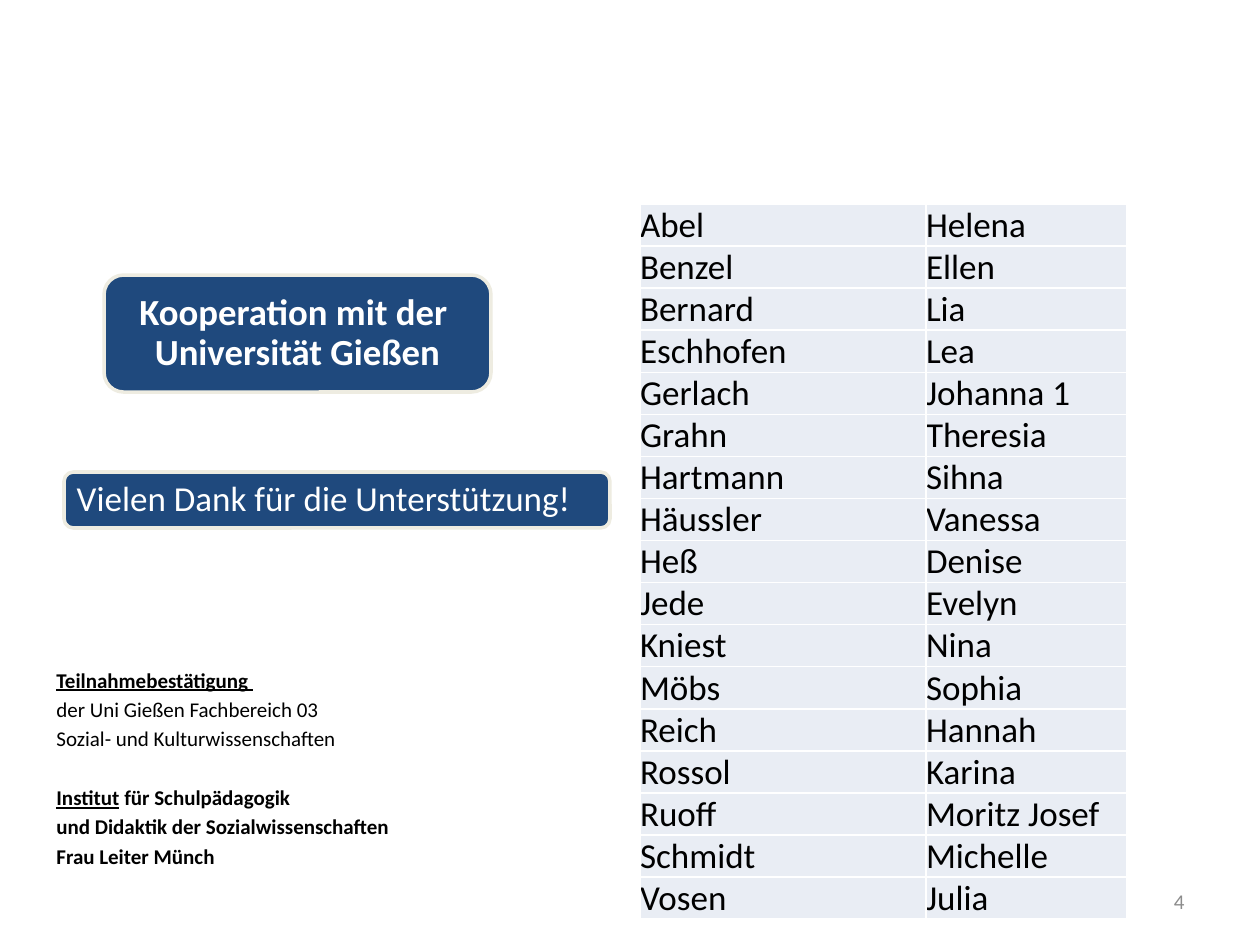
import pptx
import pptx.dml.color
import pptx.enum.shapes
import pptx.enum.text
import pptx.oxml
import pptx.oxml.ns
import pptx.util

PX = 914400 / 126
FONT = "Calibri"
COLORS = {"navy": "1F497D", "cream": "EEECE1", "cell": "E9EDF4",
          "white": "FFFFFF", "black": "000000", "gray": "8C8C8C"}
ALIGN = pptx.enum.text.PP_ALIGN
ANCHOR = pptx.enum.text.MSO_ANCHOR

STUDENTS = [
    ("Abel", "Helena"), ("Benzel", "Ellen"), ("Bernard", "Lia"),
    ("Eschhofen", "Lea"), ("Gerlach", "Johanna 1"), ("Grahn", "Theresia"),
    ("Hartmann", "Sihna"), ("Häussler", "Vanessa"), ("Heß", "Denise"),
    ("Jede", "Evelyn"), ("Kniest", "Nina"), ("Möbs", "Sophia"),
    ("Reich", "Hannah"), ("Rossol", "Karina"), ("Ruoff", "Moritz Josef"),
    ("Schmidt", "Michelle"), ("Vosen", "Julia"),
]

# (text, bold, underlined) runs, preceded by the space before in points
CERTIFICATE = [
    (0, [("Teilnahmebestätigung ", True, True)]),
    (2.4, [("der Uni Gießen Fachbereich 03", False, False)]),
    (2.4, [("Sozial- und Kulturwissenschaften", False, False)]),
    (19, [("Institut", True, True), (" für Schulpädagogik", True, False)]),
    (2.4, [("und Didaktik der Sozialwissenschaften", True, False)]),
    (2.4, [("Frau Leiter Münch", True, False)]),
]


def px(*values):
    """Turn pixel lengths into EMU."""
    return [pptx.util.Emu(round(v * PX)) for v in values]


def rgb(name):
    """Look up a named colour."""
    return pptx.dml.color.RGBColor.from_string(COLORS[name])


def style(font, size, color, bold=False, underline=False):
    """Format a font."""
    font.name = FONT
    font.size = pptx.util.Pt(size)
    font.bold = bold
    font.underline = underline
    font.color.rgb = rgb(color)


def set_margins(obj, margin):
    """Give a text frame or cell the same margin on all sides."""
    obj.margin_left, obj.margin_top, obj.margin_right, obj.margin_bottom = px(*[margin] * 4)


def add_banner(s, box, text, size, margin, align, bold=False):
    """Add a rounded banner with its text."""
    sp = s.shapes.add_shape(pptx.enum.shapes.MSO_SHAPE.ROUNDED_RECTANGLE, *px(*box))
    sp.shadow.inherit = False
    sp.fill.solid()
    sp.fill.fore_color.rgb = rgb("navy")
    sp.line.color.rgb = rgb("cream")
    sp.line.width = pptx.util.Pt(2)
    tf = sp.text_frame
    tf.word_wrap = True
    tf.vertical_anchor = ANCHOR.MIDDLE
    set_margins(tf, margin)
    tf.text = text
    p = tf.paragraphs[0]
    p.alignment = align
    p.line_spacing = 0.9
    for r in p.runs:
        style(r.font, size, "white", bold)


def add_text(s, box, paragraphs, color, align=ALIGN.LEFT, anchor=ANCHOR.TOP):
    """Add a text box of paragraphs made of formatted runs."""
    tf = s.shapes.add_textbox(*px(*box)).text_frame
    tf.word_wrap = True
    tf.vertical_anchor = anchor
    for i, (space, runs) in enumerate(paragraphs):
        p = tf.add_paragraph() if i else tf.paragraphs[0]
        p.alignment = align
        if space:
            p.space_before = pptx.util.Pt(space)
        for text, bold, underline in runs:
            r = p.add_run()
            r.text = text
            style(r.font, 12, color, bold, underline)


def add_borders(cell):
    """Draw thin white lines around a cell."""
    tc_pr = cell._tc.get_or_add_tcPr()
    for side in ("lnL", "lnR", "lnT", "lnB"):
        tc_pr.append(pptx.oxml.parse_xml(
            f'<a:{side} {pptx.oxml.ns.nsdecls("a")} w="12700"><a:solidFill>'
            f'<a:srgbClr val="{COLORS["white"]}"/></a:solidFill></a:{side}>'))


def add_name_table(s, left, top, widths, row_height):
    """Add the table of students."""
    box = px(left, top, sum(widths), row_height * len(STUDENTS))
    table = s.shapes.add_table(len(STUDENTS), len(widths), *box).table
    table.first_row = table.horz_banding = False
    for column, width in zip(table.columns, px(*widths)):
        column.width = width
    for row, names in zip(table.rows, STUDENTS):
        row.height = px(row_height)[0]
        for cell, name in zip(row.cells, names):
            add_borders(cell)
            cell.fill.solid()
            cell.fill.fore_color.rgb = rgb("cell")
            set_margins(cell, 0)
            cell.vertical_anchor = ANCHOR.BOTTOM
            cell.text = name
            style(cell.text_frame.paragraphs[0].runs[0].font, 20, "black")


def main():
    """Build the thank-you slide."""
    prs = pptx.Presentation()
    prs.slide_width, prs.slide_height = px(1260, 945)
    s = prs.slides.add_slide(prs.slide_layouts[6])
    add_text(s, (903, 876, 294, 50), [(0, [("4", False, False)])], "gray",
             ALIGN.RIGHT, ANCHOR.MIDDLE)
    add_text(s, (44, 661, 537, 238), CERTIFICATE, "black")
    add_name_table(s, 640, 204, (286, 201), 42)
    add_banner(s, (64, 472, 546, 56), "Vielen Dank für die Unterstützung!", 20, 10, ALIGN.LEFT)
    add_banner(s, (104, 275, 387, 117), "Kooperation mit der \vUniversität Gießen", 21, 11,
               ALIGN.CENTER, bold=True)
    prs.save("out.pptx")


if __name__ == "__main__":
    main()
